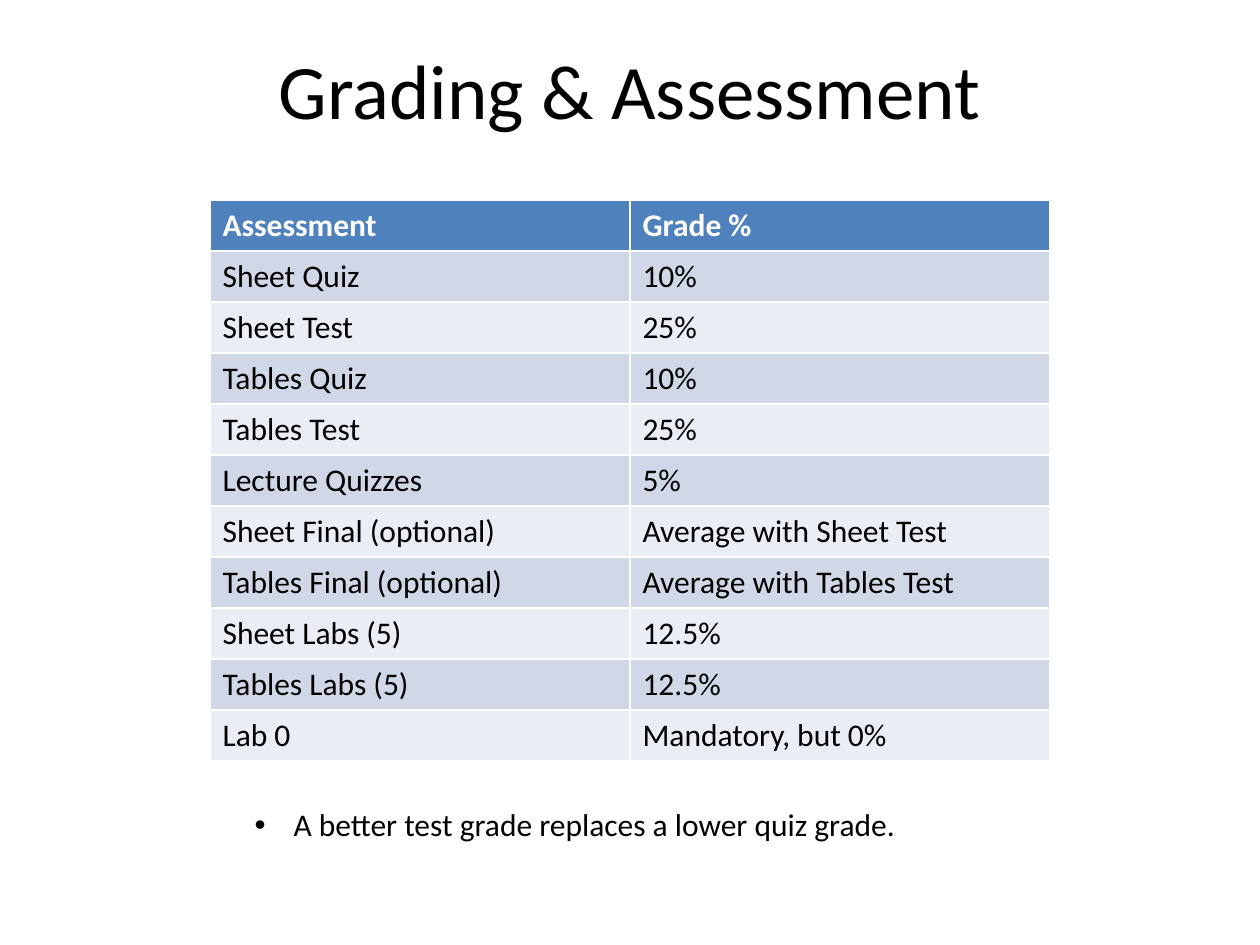
import pptx
import pptx.dml.color
import pptx.enum.text
import pptx.util
from lxml import etree

RGBColor = pptx.dml.color.RGBColor
BLACK = RGBColor(0x00, 0x00, 0x00)
WHITE = RGBColor(0xFF, 0xFF, 0xFF)
HEADER_BLUE = RGBColor(0x4F, 0x81, 0xBD)
BANDS = [RGBColor(0xE9, 0xED, 0xF4), RGBColor(0xD0, 0xD8, 0xE8)]
PX_PER_INCH = 126
ROW_HEIGHT = 51

GRADES = [
    ("Assessment", "Grade %"),
    ("Sheet Quiz", "10%"),
    ("Sheet Test", "25%"),
    ("Tables Quiz", "10%"),
    ("Tables Test", "25%"),
    ("Lecture Quizzes", "5%"),
    ("Sheet Final (optional)", "Average with Sheet Test"),
    ("Tables Final (optional)", "Average with Tables Test"),
    ("Sheet Labs (5)", "12.5%"),
    ("Tables Labs (5)", "12.5%"),
    ("Lab 0", "Mandatory, but 0%"),
]


def px(*lengths):
    return [pptx.util.Emu(round(n * 914400 / PX_PER_INCH)) for n in lengths]


def write(frame, text, size, color, bold=False):
    frame.text = text
    font = frame.paragraphs[0].runs[0].font
    font.name = "Calibri"
    font.size = pptx.util.Pt(size)
    font.color.rgb = color
    font.bold = bold


presentation = pptx.Presentation()
presentation.slide_width, presentation.slide_height = px(1260, 945)
slide = presentation.slides.add_slide(presentation.slide_layouts[1])

# Title
heading = slide.shapes.title
heading.left, heading.top, heading.width, heading.height = px(63, 10, 1134, 158)
write(heading.text_frame, "Grading & Assessment", 44, BLACK)

# Grade table: the default table style draws the white rules
grades = slide.shapes.add_table(
    len(GRADES), 2, *px(210, 200, 840, ROW_HEIGHT * len(GRADES))).table
for row, texts in enumerate(GRADES):
    is_header = row == 0
    for column, text in enumerate(texts):
        cell = grades.cell(row, column)
        write(cell.text_frame, text, 18, WHITE if is_header else BLACK, is_header)
        cell.fill.solid()
        cell.fill.fore_color.rgb = HEADER_BLUE if is_header else BANDS[row % 2]

# Bulleted note below the table
note = slide.placeholders[1]
note.left, note.top, note.width, note.height = px(242, 799, 788, 50)
write(note.text_frame, "A better test grade replaces a lower quiz grade.", 18, BLACK)
note.text_frame.auto_size = pptx.enum.text.MSO_AUTO_SIZE.SHAPE_TO_FIT_TEXT
note_line = note.text_frame.paragraphs[0]
note_line.space_before = pptx.util.Pt(0)
indent = px(39)[0]
properties = note_line._p.get_or_add_pPr()
properties.set("marL", str(indent))
properties.set("indent", str(-indent))
namespace = "{http://schemas.openxmlformats.org/drawingml/2006/main}"
etree.SubElement(properties, namespace + "buFont", typeface="Arial")
etree.SubElement(properties, namespace + "buChar", char="•")

presentation.save("out.pptx")
